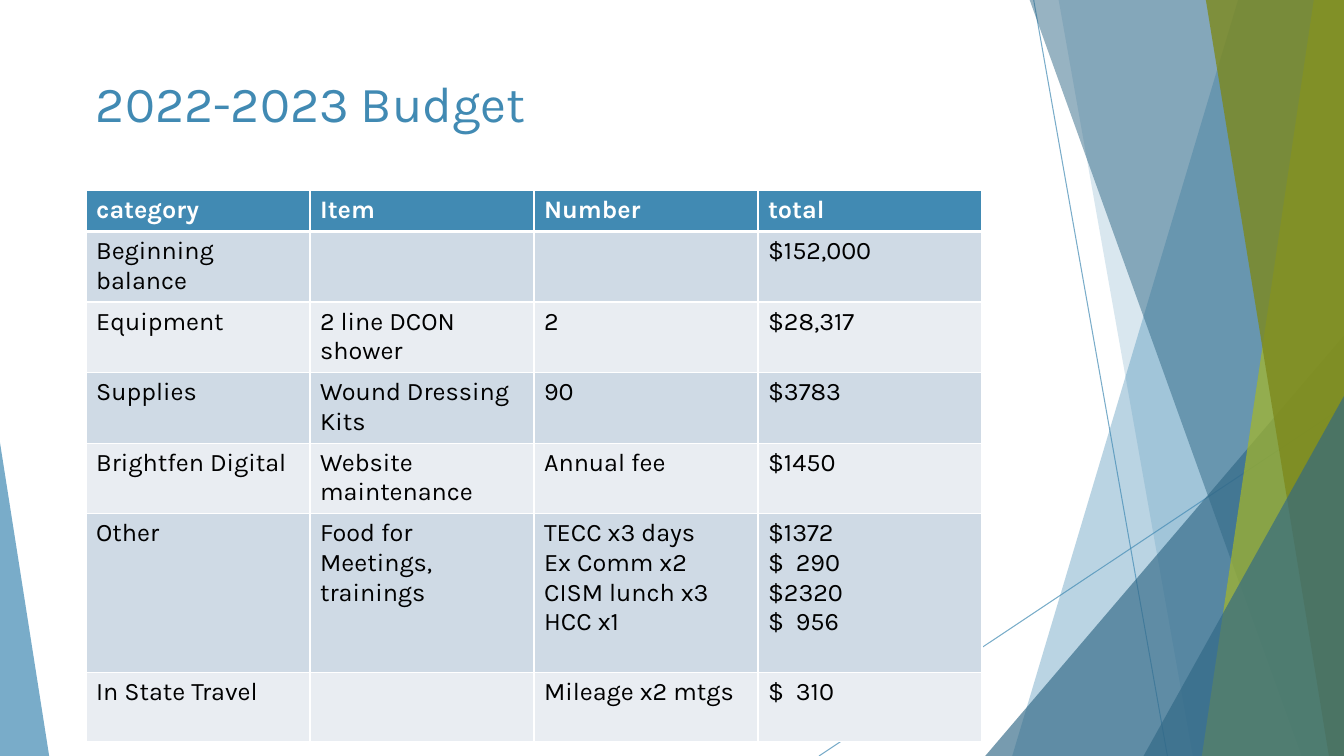
from lxml import etree
from pptx import Presentation
from pptx import util as u
from pptx.dml.color import RGBColor
from pptx.enum import shapes, text
from pptx.oxml import ns
from pptx.util import Cm

FONT = "Karla"
BLUE, NAVY, LIME, OLIVE = "418AB3", "316886", "A6B727", "7D891D"
WHITE, BLACK = "FFFFFF", "000000"
BANDS = ("CFDAE5", "E9EDF2")

BUDGET = [
    ("category", "Item", "Number", "total"),
    ("Beginning balance", "", "", "$152,000"),
    ("Equipment", "2 line DCON shower", "2", "$28,317"),
    ("Supplies", "Wound Dressing Kits", "90", "$3783"),
    ("Brightfen Digital", "Website maintenance", "Annual fee", "$1450"),
    ("Other", "Food for Meetings, trainings",
     "TECC x3 days\nEx Comm x2\nCISM lunch x3\nHCC x1",
     "$1372\n$  290\n$2320\n$  956"),
    ("In State Travel", "", "Mileage x2 mtgs", "$  310"),
]
ROW_HEIGHTS = (1.03, 1.75, 1.75, 1.75, 1.75, 3.99, 1.75)


def rgb(hex_colour):
    return RGBColor.from_string(hex_colour)


def set_opacity(shape, percent):
    for colour in shape.element.spPr.iter(ns.qn("a:srgbClr")):
        etree.SubElement(colour, ns.qn("a:alpha"), val=str(percent * 1000))


def paint(shape, colour, opacity):
    shape.shadow.inherit = False
    shape.fill.solid()
    shape.fill.fore_color.rgb = rgb(colour)
    shape.line.fill.background()
    set_opacity(shape, opacity)


def style_text(frame, size, colour, bold=False):
    for paragraph in frame.paragraphs:
        for run in paragraph.runs:
            run.font.name = FONT
            run.font.size = u.Pt(size)
            run.font.bold = bold
            run.font.color.rgb = rgb(colour)


def add_triangle(slide, left, top, width, height, apex, colour, opacity):
    triangle = slide.shapes.add_shape(
        shapes.MSO_SHAPE.ISOSCELES_TRIANGLE,
        Cm(left), Cm(top), Cm(width), Cm(height))
    triangle.adjustments[0] = apex
    paint(triangle, colour, opacity)


def add_facets(slide, left, top, width, height):
    """Translucent facets, measured inwards from the right edge of the box."""
    right, bottom = left + width, top + height

    def ray(start_inset, start_drop, end_inset):
        line = slide.shapes.add_connector(
            shapes.MSO_CONNECTOR.STRAIGHT,
            Cm(right - start_inset), Cm(top + start_drop),
            Cm(right - end_inset), Cm(bottom))
        line.line.color.rgb = rgb(BLUE)
        line.line.width = u.Pt(0.75)
        set_opacity(line, 70)
        etree.SubElement(line.element.spPr, ns.qn("a:effectLst"))

    def blade(top_inset, bottom_inset, colour, opacity):
        outline = slide.shapes.build_freeform(Cm(right - top_inset), Cm(top))
        outline.add_line_segments([
            (Cm(right), Cm(top)), (Cm(right), Cm(bottom)),
            (Cm(right - bottom_inset), Cm(bottom))])
        paint(outline.convert_to_shape(), colour, opacity)

    def corner(span, rise):
        add_triangle(slide, right - span, bottom - rise, span, rise,
                     1, NAVY, 66)

    ray(7.82, 0, 4.45)
    ray(0, 10.24, 13.23)
    blade(2.67, 8.36, BLUE, 36)
    blade(7.19, 3.81, BLUE, 20)
    corner(9.04, 10.59)
    blade(7.92, 1.07, NAVY, 50)
    blade(0.76, 3.58, LIME, 70)
    blade(3.48, 0.38, OLIVE, 80)
    corner(5.05, 9.07)


def add_title(slide, left, top, width, height):
    title = slide.shapes.add_textbox(
        Cm(left), Cm(top), Cm(width), Cm(height)).text_frame
    title.word_wrap = True
    title.vertical_anchor = text.MSO_ANCHOR.TOP
    title.text = "2022-2023 Budget"
    style_text(title, 36, BLUE)


def set_header_borders(cell):
    properties = cell._tc.get_or_add_tcPr()
    widths = {"lnL": 1, "lnR": 1, "lnT": 1, "lnB": 3}
    for position, (side, points) in enumerate(widths.items()):
        border = etree.Element(ns.qn(f"a:{side}"), w=str(u.Pt(points)))
        fill = etree.SubElement(border, ns.qn("a:solidFill"))
        etree.SubElement(fill, ns.qn("a:srgbClr"), val=WHITE)
        properties.insert(position, border)


def add_budget(slide, left, top, width):
    budget = slide.shapes.add_table(
        len(BUDGET), len(BUDGET[0]), Cm(left), Cm(top),
        Cm(width), Cm(sum(ROW_HEIGHTS))).table
    for row, height in zip(budget.rows, ROW_HEIGHTS):
        row.height = Cm(height)
    for r, entries in enumerate(BUDGET):
        header = r == 0
        for c, entry in enumerate(entries):
            cell = budget.cell(r, c)
            cell.text_frame.text = entry
            style_text(cell.text_frame, 18, WHITE if header else BLACK, header)
            cell.fill.solid()
            cell.fill.fore_color.rgb = rgb(BLUE if header else BANDS[(r - 1) % 2])
            if header:
                set_header_borders(cell)


def main():
    deck = Presentation()
    deck.slide_width, deck.slide_height = Cm(33.87), Cm(19.05)
    slide = deck.slides.add_slide(deck.slide_layouts[6])
    add_facets(slide, 20.64, 0, 13.23, 19.05)
    add_triangle(slide, 0, 11.15, 1.24, 7.9, 0, BLUE, 70)
    add_title(slide, 2.17, 1.7, 23.6, 2.72)
    add_budget(slide, 2.17, 4.8, 22.58)
    deck.save("out.pptx")


if __name__ == "__main__":
    main()
